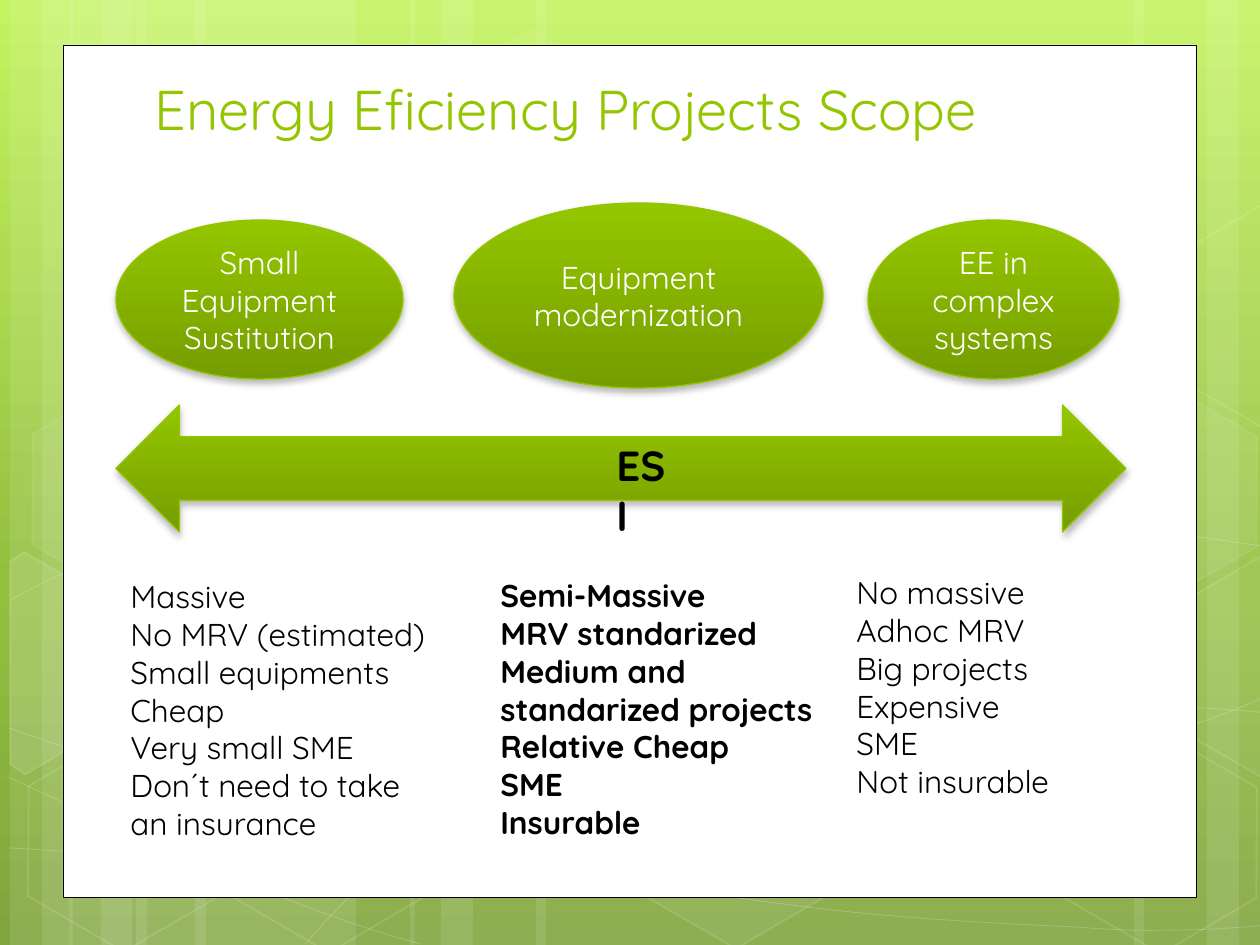
import copy
import math
import pptx
import pptx.dml.color
import pptx.enum.shapes
import pptx.enum.text
import pptx.oxml
import pptx.oxml.ns
import pptx.util

RGB = pptx.dml.color.RGBColor
KIND = pptx.enum.shapes.MSO_SHAPE
ALIGN = pptx.enum.text.PP_ALIGN
ANCHOR = pptx.enum.text.MSO_ANCHOR
qn = pptx.oxml.ns.qn
SPACE = pptx.oxml.ns.nsdecls("a")
PX = 914400 / 126
FONT = "Quicksand"
WHITE = RGB(0xFF, 0xFF, 0xFF)
BLACK = RGB(0, 0, 0)
GREEN = RGB(0x94, 0xC6, 0x00)
MOSS = RGB(0x76, 0x9D, 0x00)
SKY = [(0, RGB(0xC3, 0xF3, 0x5F)), (0.62, RGB(0x93, 0xBF, 0x3F)),
       (1, RGB(0x81, 0xA5, 0x3E))]
LEAF = [(0, GREEN), (1, MOSS)]
TILT = 30

BARS = [(136, 220), (10, 63), (42, 105), (195, 220), (69, 63), (101, 105),
        (924, 220), (1207, 63), (1134, 105), (536, 388), (410, 63), (441, 105)]
CURVES = [
    [(9, 848), (77, 852), (145, 856), (239, 854), (334, 853), (451, 851), (577, 838),
     (703, 825), (882, 801), (998, 777), (1113, 753), (1231, 716), (1269, 694)],
    [(9, 601), (45, 581), (82, 562), (152, 543), (224, 524), (326, 496), (437, 488),
     (549, 479), (685, 478), (824, 488), (963, 498), (1193, 537), (1269, 547)],
    [(8, 777), (160, 847), (311, 916), (421, 944)],
    [(9, 728), (48, 742), (88, 756), (161, 776), (234, 795), (344, 827), (450, 848),
     (554, 869), (687, 892), (791, 905), (896, 919), (1008, 924), (1075, 927),
     (1140, 932), (1158, 930), (1191, 930), (1223, 929), (1246, 927), (1269, 925)],
    [(305, 944), (328, 919), (350, 893), (381, 871), (411, 848), (454, 823), (489, 805),
     (524, 788), (546, 780), (592, 767), (638, 755), (722, 737), (766, 728),
     (811, 719), (818, 719), (857, 717), (896, 713), (958, 709), (1000, 708),
     (1045, 707), (1116, 708), (1116, 708), (1144, 708), (1173, 708), (1201, 708),
     (1223, 709), (1245, 711), (1256, 712), (1268, 713), (1264, 712), (1268, 713)],
]
HEXES = [(421, 45, 4, 8), (626, 742, 6, 12), (14, 745, 0, 12), (18, 393, 7, 8),
         (219, 746, 0, 12), (949, 571, 10, 12), (1051, 747, 0, 12), (1051, 396, 7, 8)]
SHARDS = [
    ((45, 674), 10,
     [(10, 561), (24, 552), (121, 607), (120, 718), (25, 774), (10, 765)]),
    ((1241, 655), 4,
     [(1167, 611), (1261, 556), (1271, 562), (1271, 772), (1263, 777), (1167, 722)]),
    ((1241, 304), 0,
     [(1167, 261), (1261, 205), (1273, 212), (1271, 422), (1263, 427), (1167, 372)]),
]
OVALS = [((0, 17, 287, 159), ["Small Equipment", "Sustitution"]),
         ((338, 0, 369, 185), ["Equipment modernization"]),
         ((752, 17, 251, 159), ["EE in complex systems"])]
LISTS = [((0, 4, 335, 280), False,
          ["Massive", "No MRV (estimated)", "Small equipments", "Cheap",
           "Very small SME", "Don´t need to take", "an insurance"]),
         ((370, 3, 340, 280), True,
          ["Semi-Massive", "MRV standarized", "Medium and", "standarized projects",
           "Relative Cheap", "SME", "Insurable"]),
         ((726, 0, 227, 242), False,
          ["No massive", "Adhoc MRV", "Big projects", "Expensive", "SME",
           "Not insurable"])]


def px(*nums):
    """Turn px lengths into EMU."""
    return [pptx.util.Emu(round(n * PX)) for n in nums]


def shift(box, part):
    """Place a part relative to a box."""
    return box[0] + part[0], box[1] + part[1], part[2], part[3]


def blend(fill, root, stops):
    """Fill with a gradient that runs downward."""
    fill.gradient()
    fill.gradient_angle = 270
    rows = root.find(".//" + qn("a:gsLst"))
    while len(rows) < len(stops):
        rows.append(copy.deepcopy(rows[0]))
    for stop, (place, color) in zip(fill.gradient_stops, stops):
        stop.position = place
        stop.color.rgb = color


def fade(node, share):
    """Make a solid fill partly clear."""
    node.find(qn("a:solidFill"))[0].append(
        pptx.oxml.parse_xml(f'<a:alpha {SPACE} val="{share * 1000}"/>'))


def veil(shape, share=0, edge=0, width=1):
    """Give a shape a faint white fill and edge."""
    shape.shadow.inherit = False
    frame = shape.element.spPr
    if share:
        shape.fill.solid()
        shape.fill.fore_color.rgb = WHITE
        fade(frame, share)
    else:
        shape.fill.background()
    if edge:
        shape.line.color.rgb = WHITE
        shape.line.width = pptx.util.Pt(width)
        fade(frame.find(qn("a:ln")), edge)
    else:
        shape.line.fill.background()


def trace(slide, dots, close):
    """Draw an outline through the dots."""
    pen = slide.shapes.build_freeform(*dots[0], scale=PX)
    pen.add_line_segments(dots[1:], close=close)
    return pen.convert_to_shape()


def curve(slide, knots):
    """Draw a chain of cubic curves."""
    shape = trace(slide, knots, False)
    steps = shape.element.findall(".//" + qn("a:lnTo"))
    for i in range(0, len(steps), 3):
        cubic = pptx.oxml.parse_xml(f"<a:cubicBezTo {SPACE}/>")
        steps[i].addprevious(cubic)
        for step in steps[i:i + 3]:
            cubic.append(step[0])
            step.getparent().remove(step)
    return shape


def shard(slide, mid, dots):
    """Draw a cut hexagon, tilted about its middle."""
    cos, sin = math.cos(math.radians(TILT)), math.sin(math.radians(TILT))
    level = []
    for x, y in dots:
        x, y = x - mid[0], y - mid[1]
        level.append((round(mid[0] + x * cos + y * sin), round(mid[1] - x * sin + y * cos)))
    shape = trace(slide, level, True)
    shape.rotation = TILT
    return shape


def write(frame, lines, size, color, bold=False, align=ALIGN.LEFT, anchor=ANCHOR.TOP):
    """Fill a text frame, one run to a line."""
    frame.word_wrap = True
    frame.auto_size = pptx.enum.text.MSO_AUTO_SIZE.NONE
    frame.vertical_anchor = anchor
    for i, line in enumerate(lines):
        para = frame.add_paragraph() if i else frame.paragraphs[0]
        para.alignment = align
        run = para.add_run()
        run.text = line
        run.font.name = FONT
        run.font.size = pptx.util.Pt(size)
        run.font.bold = bold
        run.font.color.rgb = color


def glossy(slide, kind, box):
    """Add a green shape with a soft shadow."""
    shape = slide.shapes.add_shape(kind, *px(*box))
    blend(shape.fill, shape.element.spPr, LEAF)
    shape.line.color.rgb = GREEN
    shape.line.width = pptx.util.Pt(0.75)
    shape.shadow.inherit = False
    shape.element.spPr.find(qn("a:effectLst")).append(pptx.oxml.parse_xml(
        f'<a:outerShdw {SPACE} blurRad="50800" dist="25400" dir="5400000" '
        'rotWithShape="0"><a:srgbClr val="000000">'
        '<a:alpha val="28000"/></a:srgbClr></a:outerShdw>'))
    return shape


def scene(slide, box):
    """Draw the green backdrop and its white panel."""
    blend(slide.background.fill, slide.element, SKY)
    for left, width in BARS:
        part = shift(box, (left, 0, width, box[3]))
        veil(slide.shapes.add_shape(KIND.RECTANGLE, *px(*part)), 10)
    for knots in CURVES:
        veil(curve(slide, knots), 0, 20, 0.5)
    for left, top, share, edge in HEXES:
        part = shift(box, (left, top, 220, 192))
        shape = slide.shapes.add_shape(KIND.HEXAGON, *px(*part))
        shape.adjustments[0] = 0.285
        shape.rotation = TILT
        veil(shape, share, edge)
    for mid, share, dots in SHARDS:
        veil(shard(slide, mid, dots), share, 12)
    panel = slide.shapes.add_shape(KIND.RECTANGLE, *px(*shift(box, (63, 45, 1134, 853))))
    panel.shadow.inherit = False
    panel.fill.solid()
    panel.fill.fore_color.rgb = WHITE
    panel.line.color.rgb = BLACK
    panel.line.width = pptx.util.Pt(0.5)


def head(slide, box):
    """Set the title above the backdrop."""
    title = slide.shapes.title
    slide.shapes.element.append(title.element)
    title.left, title.top, title.width, title.height = px(*box)
    write(title.text_frame, ["Energy Eficiency Projects Scope"], 32, GREEN,
          anchor=ANCHOR.BOTTOM)


def ovals(slide, box):
    """Draw the three kinds of project."""
    for part, lines in OVALS:
        shape = glossy(slide, KIND.OVAL, shift(box, part))
        write(shape.text_frame, lines, 18, WHITE, align=ALIGN.CENTER, anchor=ANCHOR.MIDDLE)


def label(slide, box, lines, size, bold):
    """Add black text in a box."""
    write(slide.shapes.add_textbox(*px(*box)).text_frame, lines, size, BLACK, bold)


def main():
    """Build and save the slide."""
    deck = pptx.Presentation()
    deck.slide_width, deck.slide_height = px(1260, 945)
    slide = deck.slides.add_slide(deck.slide_layouts[5])
    scene(slide, (0, 0, 1260, 945))
    head(slide, (142, 66, 968, 82))
    arrow = (116, 405, 1010, 127)
    glossy(slide, KIND.LEFT_RIGHT_ARROW, arrow)
    ovals(slide, (116, 203, 1003, 185))
    for part, bold, lines in LISTS:
        label(slide, shift((118, 567, 953, 284), part), lines, 18, bold)
    label(slide, shift(arrow, (488, 28, 82, 63)), ["ESI"], 24, True)
    deck.save("out.pptx")


if __name__ == "__main__":
    main()
